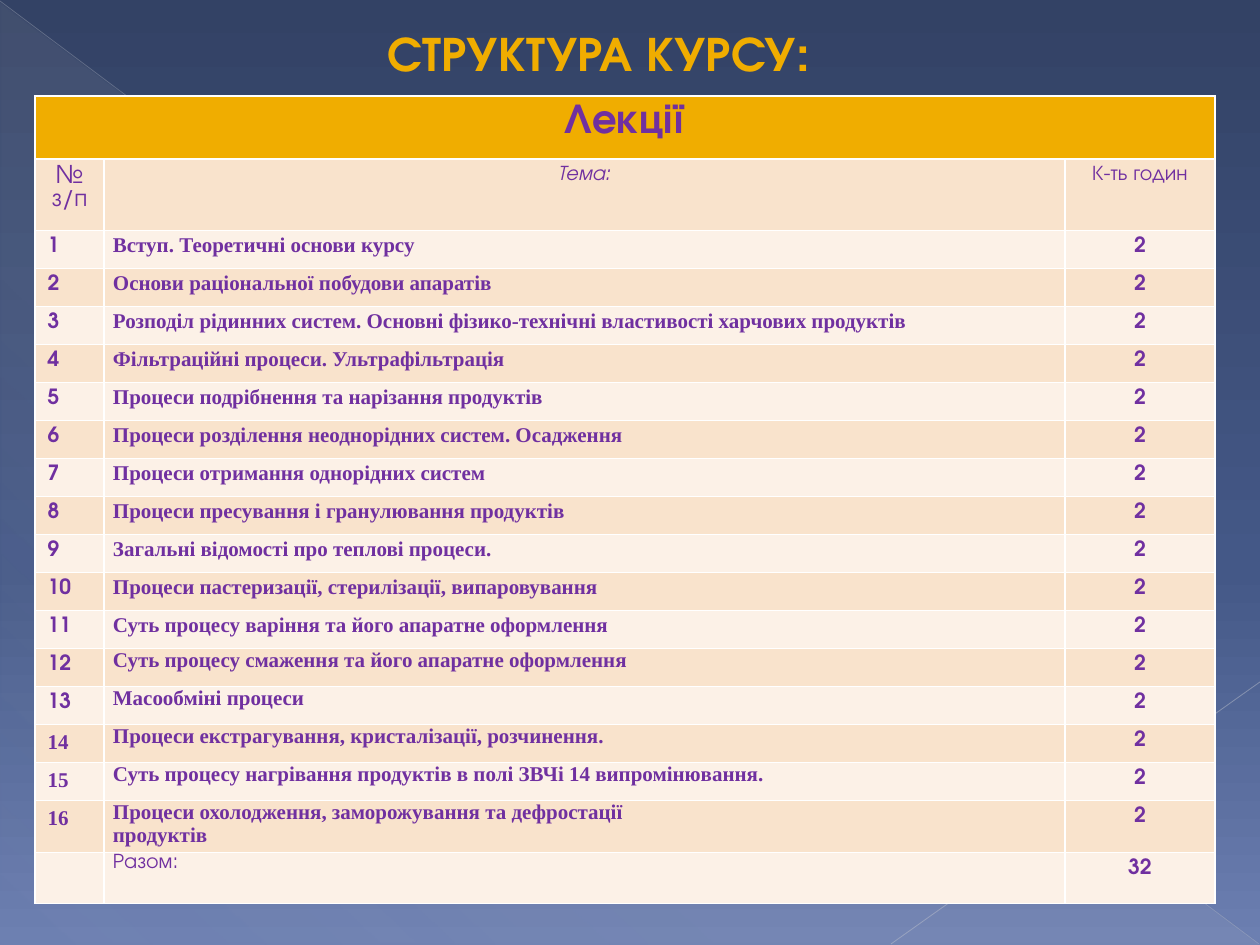
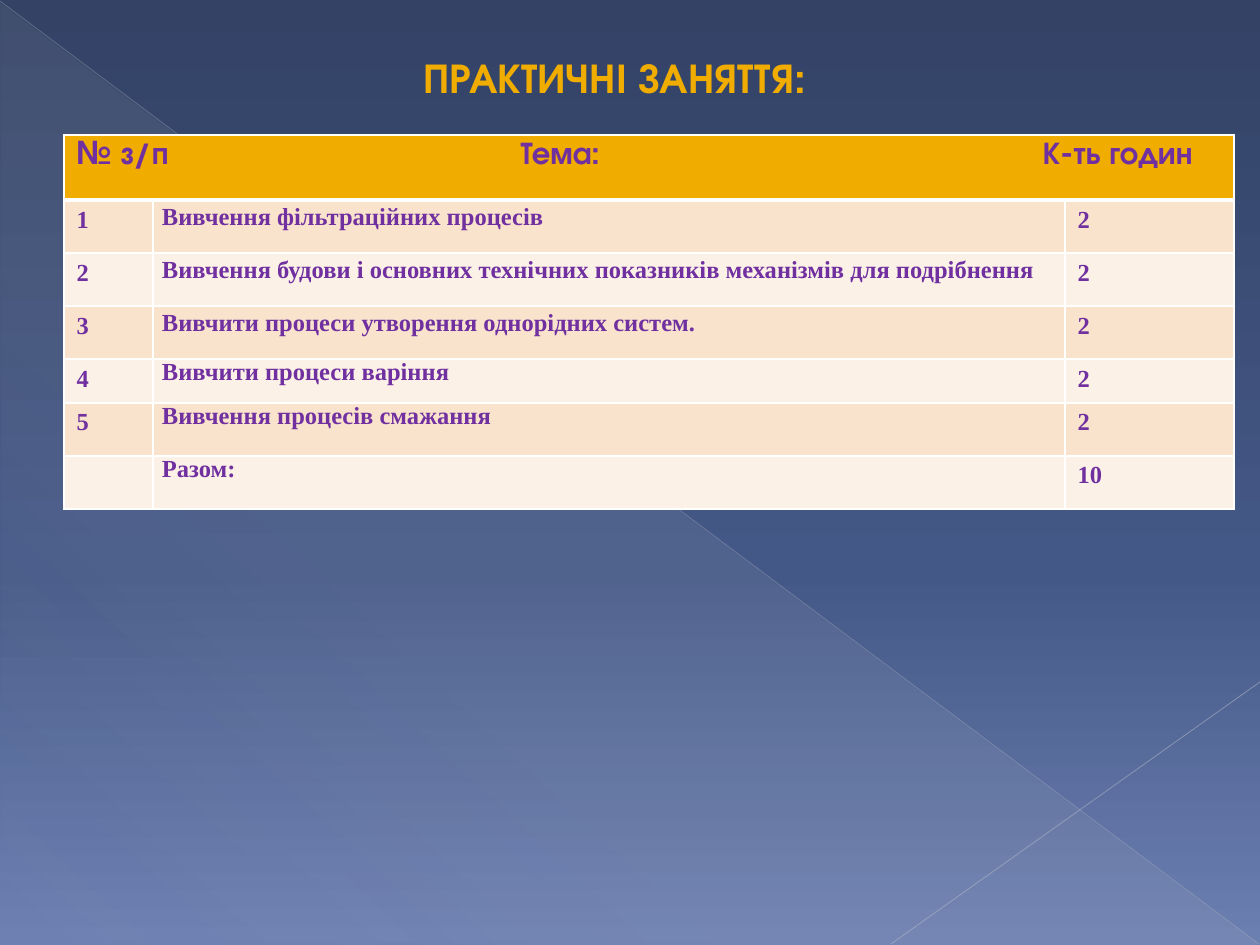
from lxml import etree
from pptx import Presentation
from pptx import util as u
from pptx.dml.color import RGBColor
from pptx.enum import shapes, text
from pptx.oxml.ns import qn

PX = 914400 // 126
COLORS = {
    "gold": "F0AD00", "violet": "7030A0", "white": "FFFFFF",
    "band": "F9E3CC", "pale": "FCF1E7", "haze": "D4D4D6",
    "diagonal": "B9BDC8", "corner": "C1C4CE",
    "sky_top": "334265", "sky_middle": "445887", "sky_bottom": "6C7FB1",
}
SANS, SERIF = "TeX Gyre Adventor", "Times New Roman"
LEFT, CENTER = text.PP_ALIGN.LEFT, text.PP_ALIGN.CENTER

LECTURES = [
    "Вступ. Теоретичні основи курсу",
    "Основи раціональної побудови апаратів",
    "Розподіл рідинних систем. Основні фізико-технічні властивості харчових продуктів",
    "Фільтраційні процеси. Ультрафільтрація",
    "Процеси подрібнення та нарізання продуктів",
    "Процеси розділення неоднорідних систем. Осадження",
    "Процеси отримання однорідних систем",
    "Процеси пресування і гранулювання продуктів",
    "Загальні відомості про теплові процеси.",
    "Процеси пастеризації, стерилізації, випаровування",
    "Суть процесу варіння та його апаратне оформлення",
    "Суть процесу смаження та його апаратне оформлення",
    "Масообміні процеси",
    "Процеси екстрагування, кристалізації, розчинення.",
    "Суть процесу нагрівання продуктів в полі ЗВЧі 14 випромінювання.",
    "Процеси охолодження, заморожування та дефростації\nпродуктів",
]
PRACTICALS = [
    "Вивчення фільтраційних процесів",
    "Вивчення будови і основних технічних показників механізмів для подрібнення",
    "Вивчити процеси утворення однорідних систем.",
    "Вивчити процеси варіння",
    "Вивчення процесів смажання",
]
HOURS = 2


def px(*lengths):
    return [u.Emu(length * PX) for length in lengths]


def color(name):
    return RGBColor.from_string(COLORS[name])


def add_alpha(color_node, percent):
    etree.SubElement(color_node, qn("a:alpha"), val=str(percent * 1000))


def set_gradient(fill, holder, stops, angle):
    """Fill with (position, colour, opacity) stops; holder is the XML around the fill."""
    fill.gradient()
    node = holder.find(".//" + qn("a:gradFill"))
    stop_list = node.find(qn("a:gsLst"))
    for old_stop in list(stop_list):
        stop_list.remove(old_stop)
    for position, name, opacity in stops:
        stop = etree.SubElement(stop_list, qn("a:gs"), pos=str(position * 1000))
        add_alpha(etree.SubElement(stop, qn("a:srgbClr"), val=COLORS[name]), opacity)
    node.find(qn("a:lin")).set("ang", str(angle * 60000))


def paint_background(master):
    stops = [(0, "sky_top", 100), (60, "sky_middle", 100), (100, "sky_bottom", 100)]
    set_gradient(master.background.fill, master.element, stops, 90)


def add_hairline(page, ends, name, width, opacity):
    line = page.shapes.add_connector(shapes.MSO_CONNECTOR.STRAIGHT, *px(*ends))
    line.line.color.rgb = color(name)
    line.line.width = u.Pt(width)
    properties = line.element.spPr
    add_alpha(properties.find(".//" + qn("a:srgbClr")), opacity)
    etree.SubElement(properties, qn("a:effectLst"))
    return line


def add_backdrop(page):
    """Put the pale triangle and two hairlines behind everything else."""
    haze = page.shapes.add_shape(shapes.MSO_SHAPE.RIGHT_TRIANGLE, *px(1, 3, 1258, 942))
    haze.shadow.inherit = False
    haze.line.fill.background()
    stops = [(0, "haze", 10), (70, "haze", 8), (100, "haze", 1)]
    set_gradient(haze.fill, haze.element, stops, 133)
    diagonal = add_hairline(page, (0, 1, 1259, 944), "diagonal", 0.39, 35)
    corner = add_hairline(page, (1260, 682, 891, 944), "corner", 0.47, 45)
    for part in (corner, diagonal, haze):
        page.shapes.element.insert(2, part.element)


def add_page(deck, title, box, size):
    page = deck.slides.add_slide(deck.slide_layouts[5])
    add_backdrop(page)
    holder = page.shapes.title
    holder.left, holder.top, holder.width, holder.height = px(*box)
    holder.text_frame.text = title
    holder.text_frame.auto_size = text.MSO_AUTO_SIZE.SHAPE_TO_FIT_TEXT
    style(holder.text_frame.paragraphs[0], SANS, size, "gold", align=CENTER)
    return page


def style(para, face, size, name="violet", bold=True, italic=False, align=LEFT):
    para.alignment = align
    font = para.font
    font.name, font.size = face, u.Pt(size)
    font.bold, font.italic = bold, italic
    font.color.rgb = color(name)


def write(cell, words, face, size, spacing=None, **options):
    cell.text = words
    for para in cell.text_frame.paragraphs:
        if spacing:
            para.line_spacing = spacing
        style(para, face, size, **options)


def write_topic(cell, words, face, size, spacing=None, **options):
    """Write a cell of the topic column, which has tight margins."""
    cell.margin_left, cell.margin_right = px(9, 9)
    cell.margin_top = cell.margin_bottom = 0
    write(cell, words, face, size, spacing, **options)


def add_edges(cell, widths):
    properties = cell._tc.get_or_add_tcPr()
    for side, width in zip("LRTB", widths):
        edge = etree.SubElement(properties, qn("a:ln" + side), w=str(u.Pt(width)))
        fill = etree.SubElement(edge, qn("a:solidFill"))
        etree.SubElement(fill, qn("a:srgbClr"), val=COLORS["white"])


def add_grid(page, left, top, columns, rows, header_rule):
    """Add a banded three-column table with a merged gold header."""
    box = px(left, top, sum(columns), sum(rows))
    grid = page.shapes.add_table(len(rows), len(columns), *box).table
    grid.first_row = grid.horz_banding = False
    for column, width in zip(grid.columns, px(*columns)):
        column.width = width
    for index, (row, height) in enumerate(zip(grid.rows, px(*rows))):
        row.height = height
        above = header_rule if index == 1 else 1
        below = header_rule if index == 0 else 1
        band = "band" if index % 2 else "pale"
        for cell in row.cells:
            add_edges(cell, (1, 1, above, below))
            cell.fill.solid()
            cell.fill.fore_color.rgb = color(band if index else "gold")
    grid.cell(0, 0).merge(grid.cell(0, len(columns) - 1))
    return grid


def build_lectures(deck):
    page = add_page(deck, "СТРУКТУРА КУРСУ:", (284, 16, 630, 72), 28)
    rows = [62, 71] + [38] * (len(LECTURES) - 1) + [52, 51]
    grid = add_grid(page, 35, 96, (69, 961, 150), rows, 1)
    write(grid.cell(0, 0), "Лекції", SANS, 24, align=CENTER)
    write(grid.cell(1, 0), "№ з/п", SANS, 14, bold=False, align=CENTER)
    write(grid.cell(1, 1), "Тема:", SANS, 12, bold=False, italic=True, align=CENTER)
    write(grid.cell(1, 2), "К-ть годин", SANS, 12, bold=False, align=CENTER)
    for number, topic in enumerate(LECTURES, 1):
        row = number + 1
        write(grid.cell(row, 0), str(number), SANS if number < 14 else SERIF, 12)
        write_topic(grid.cell(row, 1), topic, SERIF, 12, 1.15 if number < 12 else None)
        write(grid.cell(row, 2), str(HOURS), SANS, 12, align=CENTER)
    last = len(rows) - 1
    write_topic(grid.cell(last, 1), "Разом:", SANS, 12, bold=False)
    write(grid.cell(last, 2), str(HOURS * len(LECTURES)), SANS, 12, align=CENTER)


def build_practicals(deck):
    page = add_page(deck, "ПРАКТИЧНІ ЗАНЯТТЯ:", (203, 45, 824, 63), 24)
    rows = (65, 53, 53, 53, 44, 53, 53)
    grid = add_grid(page, 64, 135, (89, 912, 169), rows, 3)
    header = grid.cell(0, 0)
    header.text = "№ з/п\tТема:\tК-ть годин"
    para = header.text_frame.paragraphs[0]
    tabs = etree.SubElement(para._p.get_or_add_pPr(), qn("a:tabLst"))
    for position in px(444, 966):
        etree.SubElement(tabs, qn("a:tab"), pos=str(position), algn="l")
    style(para, SANS, 18)
    for number, topic in enumerate(PRACTICALS, 1):
        write(grid.cell(number, 0), str(number), SERIF, 14)
        write_topic(grid.cell(number, 1), topic, SERIF, 14, 1.15 if number < 4 else None)
        write(grid.cell(number, 2), str(HOURS), SERIF, 14)
    last = len(rows) - 1
    write_topic(grid.cell(last, 1), "Разом:", SERIF, 14)
    write(grid.cell(last, 2), str(HOURS * len(PRACTICALS)), SERIF, 14)


def main():
    deck = Presentation()
    deck.slide_width, deck.slide_height = u.Inches(10), u.Inches(7.5)
    paint_background(deck.slide_master)
    build_lectures(deck)
    build_practicals(deck)
    deck.save("out.pptx")


if __name__ == "__main__":
    main()
